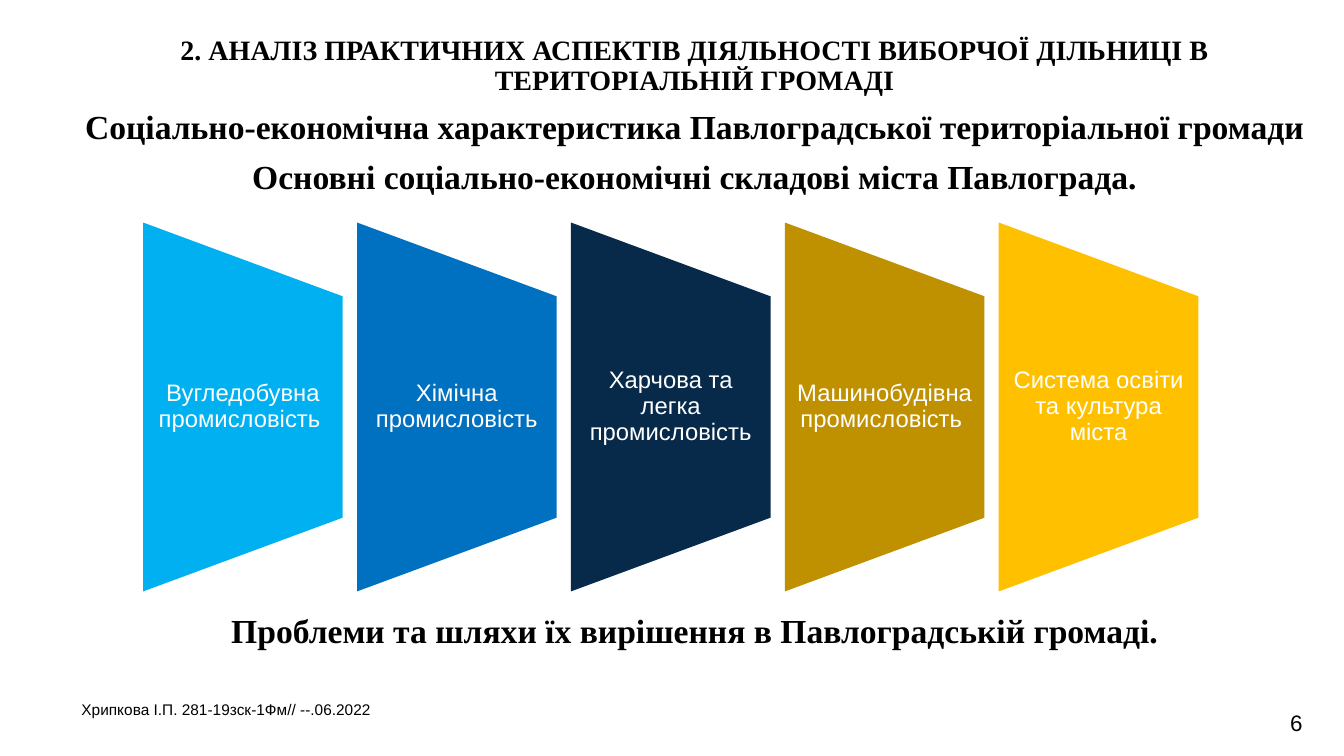
"""Builds the slide on the economic components of the Pavlohrad community."""
import pptx
import pptx.dml.color
import pptx.enum.shapes
import pptx.enum.text
import pptx.util
from dataclasses import dataclass

Pt = pptx.util.Pt
Align = pptx.enum.text.PP_ALIGN
Anchor = pptx.enum.text.MSO_ANCHOR


@dataclass(frozen=True)
class Theme:
    serif: str = "Times New Roman"
    sans: str = "Arial"
    black: str = "000000"
    white: str = "FFFFFF"
    sectors: tuple = ("00B0F0", "0070C0", "072A4B", "BF9000", "FFC000")
    title: int = 20
    heading: int = 24
    label: int = 17
    number: int = 16
    footer: int = 11


theme = Theme()


def add_text(box, lines, face, color, bold=False, align=Align.CENTER, anchor=Anchor.TOP, insets=(7.2, 3.6), spacing=0.9):
    textbox = slide.shapes.add_textbox(*(Pt(value) for value in box))
    frame = textbox.text_frame
    frame.word_wrap = True
    frame.vertical_anchor = anchor
    frame.margin_left = frame.margin_right = Pt(insets[0])
    frame.margin_top = frame.margin_bottom = Pt(insets[1])
    for index, (text, size) in enumerate(lines):
        paragraph = frame.add_paragraph() if index else frame.paragraphs[0]
        paragraph.text = text
        paragraph.alignment = align
        paragraph.line_spacing = spacing
        if index:
            paragraph.space_before = Pt(10)
        paragraph.font.name = face
        paragraph.font.size = Pt(size)
        paragraph.font.bold = bold
        paragraph.font.color.rgb = pptx.dml.color.RGBColor.from_string(color)


presentation = pptx.Presentation()
presentation.slide_width = Pt(960)
presentation.slide_height = Pt(540)
slide = presentation.slides.add_slide(presentation.slide_layouts[6])

add_text((902.9, 503.3, 46, 26.6), [("6", theme.number)], theme.sans, theme.black, spacing=1.0)
headings = [
    ("2. АНАЛІЗ ПРАКТИЧНИХ АСПЕКТІВ ДІЯЛЬНОСТІ ВИБОРЧОЇ ДІЛЬНИЦІ В ТЕРИТОРІАЛЬНІЙ ГРОМАДІ", theme.title),
    ("Соціально-економічна характеристика Павлоградської територіальної громади", theme.heading),
    ("Основні соціально-економічні складові міста Павлограда.", theme.heading),
]
add_text((51.1, 22.3, 890, 122), headings, theme.serif, theme.black, bold=True)
problems = [("Проблеми та шляхи їх вирішення в Павлоградській громаді.", theme.heading)]
add_text((51.1, 435, 890, 34), problems, theme.serif, theme.black, bold=True)
footer = [("Хрипкова І.П. 281-19зск-1Фм// --.06.2022", theme.footer)]
add_text((51.1, 498.2, 784, 18.7), footer, theme.sans, theme.black, align=Align.LEFT)

sectors = (
    "Вугледобувна промисловість ",
    "Хімічна промисловість",
    "Харчова та легка промисловість",
    "Машинобудівна промисловість ",
    "Система освіти та культура міста",
)
sector_width, sector_height = 142.6, 263.5
first_left, center_y, pitch = 102.2, 290.7, 152.8
label_height = 157.7
for index, (sector, color) in enumerate(zip(sectors, theme.sectors)):
    left = first_left + index * pitch
    shape = slide.shapes.add_shape(
        pptx.enum.shapes.MSO_SHAPE.FLOWCHART_MANUAL_OPERATION,
        Pt(left + (sector_width - sector_height) / 2),
        Pt(center_y - sector_width / 2),
        Pt(sector_height),
        Pt(sector_width),
    )
    shape.rotation = 270
    shape.shadow.inherit = False
    shape.fill.solid()
    shape.fill.fore_color.rgb = pptx.dml.color.RGBColor.from_string(color)
    shape.line.fill.background()
    label_box = (left, center_y - label_height / 2, sector_width, label_height)
    add_text(label_box, [(sector, theme.label)], theme.sans, theme.white, anchor=Anchor.MIDDLE, insets=(8.5, 0))

presentation.save("out.pptx")
